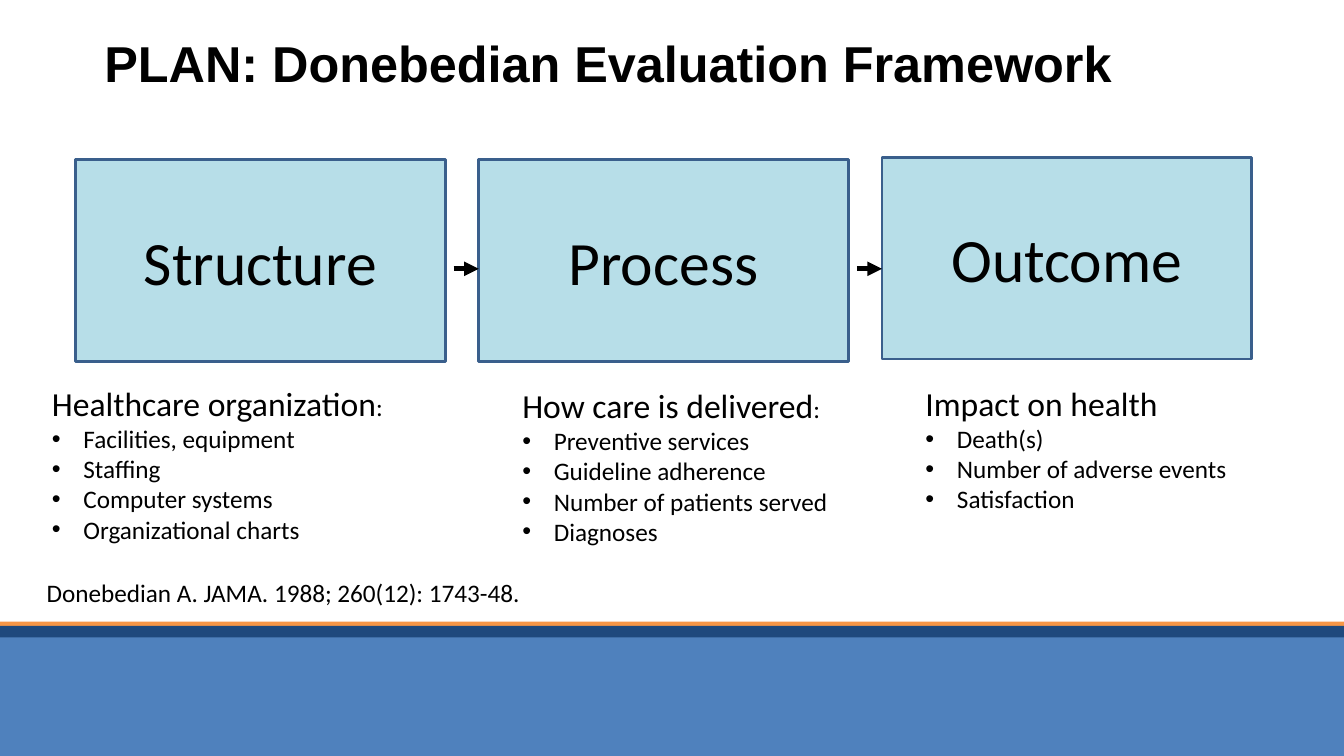
import pptx
import pptx.dml.color
import pptx.enum.shapes
import pptx.enum.text
import pptx.oxml.ns
import pptx.util
from lxml import etree

EMU_PER_PX = 9525
BLACK = "000000"
COLUMN_STEP = 384 + 8 * 0  # overwritten below by box width plus gap
BOX_WIDTH, BOX_HEIGHT, GAP = 352, 192, 32
COLUMN_STEP = BOX_WIDTH + GAP
FIRST_BOX_LEFT = 72
ARROW_LENGTH, ARROW_Y = 24, 256
BULLET_INDENT = 30

# name, box top, details left, details top, details width, heading, colon, points
STAGES = [
    ("Structure", 152, 40, 360, 338, "Healthcare organization", ":",
     ["Facilities, equipment", "Staffing", "Computer systems",
      "Organizational charts"]),
    ("Process", 152, 488, 362, 314, "How care is delivered", ":",
     ["Preventive services", "Guideline adherence",
      "Number of patients served", "Diagnoses"]),
    ("Outcome", 150, 872, 360, 309, "Impact on health", "",
     ["Death(s)", "Number of adverse events", "Satisfaction"]),
]

# top, height, colour, from back to front
FOOTER_BANDS = [(592, 11, "F79646"), (600, 120, "4F81BD"), (596, 11, "1F497D")]


def px(length):
    return pptx.util.Emu(length * EMU_PER_PX)


def rgb(hex_colour):
    return pptx.dml.color.RGBColor.from_string(hex_colour)


def add_run(paragraph, text, size, font="Calibri", bold=False):
    run = paragraph.add_run()
    run.text = text
    run.font.name = font
    run.font.size = pptx.util.Pt(size)
    run.font.bold = bold
    run.font.color.rgb = rgb(BLACK)


def add_rectangle(slide, left, top, width, height, fill, outline=None):
    rectangle = slide.shapes.add_shape(
        pptx.enum.shapes.MSO_SHAPE.RECTANGLE,
        px(left), px(top), px(width), px(height))
    rectangle.shadow.inherit = False
    rectangle.fill.solid()
    rectangle.fill.fore_color.rgb = rgb(fill)
    if outline:
        rectangle.line.color.rgb = rgb(outline)
        rectangle.line.width = pptx.util.Pt(2)
    else:
        rectangle.line.fill.background()
    return rectangle


def add_stage_box(slide, left, top, name):
    box = add_rectangle(slide, left, top, BOX_WIDTH, BOX_HEIGHT,
                        "B7DEE8", "3A5F8C")
    box.text_frame.vertical_anchor = pptx.enum.text.MSO_ANCHOR.MIDDLE
    label = box.text_frame.paragraphs[0]
    label.alignment = pptx.enum.text.PP_ALIGN.CENTER
    add_run(label, name, 44)


def add_arrow(slide, start_x, end_x, y):
    arrow = slide.shapes.add_connector(
        pptx.enum.shapes.MSO_CONNECTOR.STRAIGHT,
        px(start_x), px(y), px(end_x), px(y))
    arrow.line.color.rgb = rgb(BLACK)
    arrow.line.width = pptx.util.Pt(3.5)
    qn = pptx.oxml.ns.qn
    etree.SubElement(arrow.line._get_or_add_ln(), qn("a:tailEnd"),
                     type="triangle")
    etree.SubElement(arrow._element.spPr, qn("a:effectLst"))


def add_text_frame(slide, left, top, width, height, wrap=False):
    frame = slide.shapes.add_textbox(
        px(left), px(top), px(width), px(height)).text_frame
    frame.word_wrap = wrap
    if not wrap:
        frame.auto_size = pptx.enum.text.MSO_AUTO_SIZE.SHAPE_TO_FIT_TEXT
    return frame


def add_bullet(frame, text):
    paragraph = frame.add_paragraph()
    properties = paragraph._p.get_or_add_pPr()
    properties.set("marL", str(px(BULLET_INDENT)))
    properties.set("indent", str(px(-BULLET_INDENT)))
    qn = pptx.oxml.ns.qn
    etree.SubElement(properties, qn("a:buFont"), typeface="Arial")
    etree.SubElement(properties, qn("a:buChar"), char="•")
    add_run(paragraph, text, 18)


def add_details(slide, left, top, width, heading, colon, points):
    frame = add_text_frame(slide, left, top, width, 165)
    add_run(frame.paragraphs[0], heading, 24)
    if colon:
        add_run(frame.paragraphs[0], colon, 18)
    for point in points:
        add_bullet(frame, point)


def main():
    presentation = pptx.Presentation()
    presentation.slide_width = px(1280)
    presentation.slide_height = px(720)
    slide = presentation.slides.add_slide(presentation.slide_layouts[6])

    title = add_text_frame(slide, 90, 3, 1163, 112, wrap=True)
    title.vertical_anchor = pptx.enum.text.MSO_ANCHOR.MIDDLE
    add_run(title.paragraphs[0], "PLAN: Donebedian Evaluation Framework",
            36, font="Arial", bold=True)

    for index, (name, box_top, *details) in enumerate(STAGES):
        box_left = FIRST_BOX_LEFT + index * COLUMN_STEP
        add_stage_box(slide, box_left, box_top, name)
        if index:
            add_arrow(slide, box_left - ARROW_LENGTH, box_left, ARROW_Y)
        add_details(slide, *details)

    citation = add_text_frame(slide, 35, 545, 475, 38)
    add_run(citation.paragraphs[0],
            "Donebedian A. JAMA. 1988; 260(12): 1743-48.", 18)

    for top, height, colour in FOOTER_BANDS:
        add_rectangle(slide, 0, top, 1280, height, colour)

    presentation.save("out.pptx")


if __name__ == "__main__":
    main()
